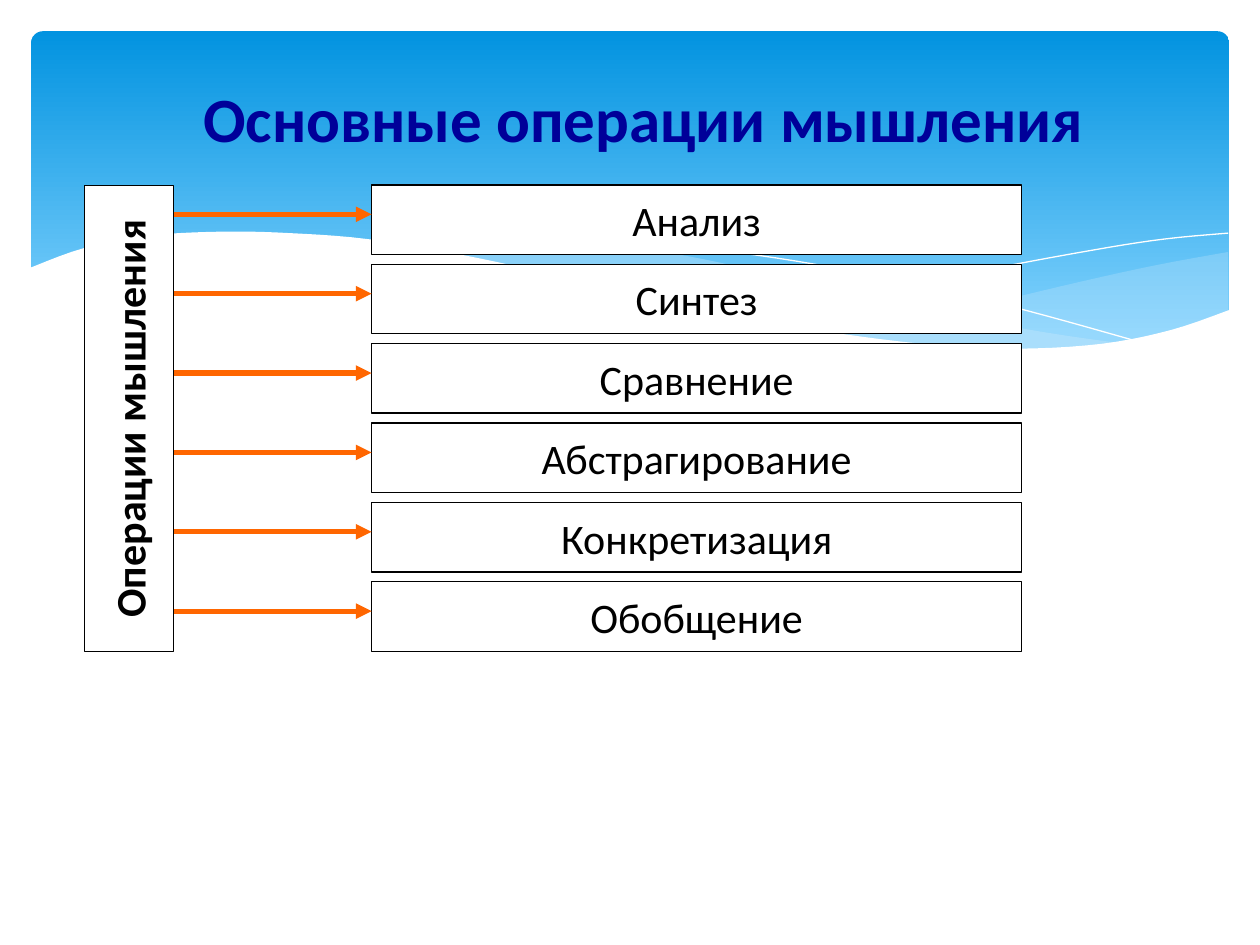
import pptx
import pptx.dml.color
import pptx.enum.shapes
import pptx.enum.text
import pptx.util
from dataclasses import dataclass
from lxml import etree
from pptx.oxml.ns import qn

Cm, Pt = pptx.util.Cm, pptx.util.Pt
Kind = pptx.enum.shapes.MSO_SHAPE
Align = pptx.enum.text.PP_ALIGN
Anchor = pptx.enum.text.MSO_ANCHOR


@dataclass(frozen=True)
class Theme:
    font: str = "Calibri"
    head: int = 36
    body: int = 24
    sky: str = "0293E0"
    pale: str = "83D3FE"
    veil: str = "C6E7FC"
    white: str = "FFFFFF"
    ink: str = "000000"
    navy: str = "000099"
    flame: str = "FF6600"


THEME = Theme()
STEPS = ["Анализ", "Синтез", "Сравнение", "Абстрагирование",
         "Конкретизация", "Обобщение"]

# Wave outlines in cm from the corner of the wave box
CREST = [(24.23, 1.57), (23.04, 1.98), (21.64, 2.26), (19.96, 2.36), (18.31, 2.29),
         (16.38, 2.06), (14.12, 1.68), (10.77, 0.91), (8.69, 0.46), (6.83, 0.15),
         (5.26, 0.03), (3.91, 0), (2.44, 0.08), (1.12, 0.33), (0, 0.74)]
RIGHT_TOP = [(24.18, 0.41), (22.81, 0.66), (21.29, 0.99), (18.54, 1.63), (16.21, 2.06)]
RIGHT_LOW = [(16.21, 2.06), (17.68, 2.24), (18.95, 2.36), (20.35, 2.36),
             (21.56, 2.29), (22.61, 2.11), (23.52, 1.85), (24.18, 1.6)]
MID_TOP = [(6.68, 0.18), (7.75, 0.08), (9.07, 0.03), (10.64, 0.13), (12.47, 0.36),
           (13.87, 0.61), (15.39, 0.97), (17.35, 1.42), (19.1, 1.78), (20.68, 2.06),
           (22.1, 2.26)]
MID_LOW = [(22.1, 2.26), (20.96, 2.36), (19.63, 2.39), (18.11, 2.31), (16.31, 2.08),
           (14.25, 1.73), (11.89, 1.22), (10.26, 0.81), (8.61, 0.48), (6.68, 0.18)]
FALL = [(7.26, 0.28), (8.38, 0.13), (9.98, 0.08), (11.84, 0.15), (14.2, 0.41),
        (16.31, 0.74), (18.72, 1.24), (20.52, 1.7), (22.45, 2.24)]
RISE = [(14.99, 1.85), (17.07, 1.3), (19.13, 0.81), (21.41, 0.38), (22.89, 0.15),
        (24.18, 0.03)]


def tint(color, code):
    color.rgb = pptx.dml.color.RGBColor.from_string(code)


def paint(shape, fill=None, line=None, width=0.75):
    shape.shadow.inherit = False
    if fill:
        shape.fill.solid()
        tint(shape.fill.fore_color, fill)
    else:
        shape.fill.background()
    if line:
        tint(shape.line.color, line)
        shape.line.width = Pt(width)
    else:
        shape.line.fill.background()


def write(frame, text, size, code, bold=False):
    para = frame.paragraphs[0]
    para.alignment = Align.CENTER
    run = para.add_run()
    run.text = text
    run.font.name, run.font.size, run.font.bold = THEME.font, Pt(size), bold
    tint(run.font.color, code)


def smooth(knots, steps=5):
    """Points of a Catmull-Rom curve through the knots."""
    ends = [knots[0], *knots, knots[-1]]
    points = [knots[0]]
    for a, b, c, d in zip(ends, ends[1:], ends[2:], ends[3:]):
        for i in range(1, steps + 1):
            t = i / steps
            points.append(tuple(
                (2 * q + (r - p) * t + (2 * p - 5 * q + 4 * r - s) * t ** 2
                 + (3 * q - p - 3 * r + s) * t ** 3) / 2
                for p, q, r, s in zip(a, b, c, d)))
    return points


def trace(slide, left, top, points, close=True):
    spots = [(Cm(left + x), Cm(top + y)) for x, y in points]
    pen = slide.shapes.build_freeform(*spots[0])
    pen.add_line_segments(spots[1:], close=close)
    return pen.convert_to_shape()


def add_sky(slide, left, top, width, height):
    panel = slide.shapes.add_shape(Kind.ROUNDED_RECTANGLE, Cm(left), Cm(top),
                                   Cm(width), Cm(height))
    paint(panel)
    panel.adjustments[0] = 0.034
    panel.fill.gradient()
    panel.fill.gradient_angle = 270
    for stop, place, code in zip(panel.fill.gradient_stops, (0, 0.9),
                                 (THEME.sky, THEME.pale)):
        stop.position = place
        tint(stop.color, code)


def add_waves(slide, left, top, width, height):
    # Translucent veils
    for upper, lower, alpha in ((RIGHT_TOP, RIGHT_LOW, 29), (MID_TOP, MID_LOW, 40)):
        veil = trace(slide, left, top, smooth(upper) + smooth(lower))
        paint(veil, THEME.veil)
        code = veil.fill._xPr.find(".//" + qn("a:srgbClr"))
        etree.SubElement(code, qn("a:alpha"), val=str(alpha * 1000))
    # Hairlines
    for knots in (FALL, RISE):
        paint(trace(slide, left, top, smooth(knots), False), line=THEME.white, width=0)
    # White foreground
    base = [(0, height), (width, height)]
    paint(trace(slide, left, top, smooth(CREST) + base), THEME.white)


def add_title(slide, left, top, width, height):
    title = slide.shapes.title
    title.left, title.top = Cm(left), Cm(top)
    title.width, title.height = Cm(width), Cm(height)
    title.text_frame.vertical_anchor = Anchor.TOP
    write(title.text_frame, "Основные операции мышления", THEME.head, THEME.navy, True)
    # Bring the title in front of the sky
    slide.shapes._spTree.append(title._element)


def add_box(slide, text, left, top, width, height, bold=False):
    box = slide.shapes.add_shape(Kind.RECTANGLE, Cm(left), Cm(top), Cm(width), Cm(height))
    paint(box, THEME.white, THEME.ink)
    box.text_frame.word_wrap = False
    box.text_frame.vertical_anchor = Anchor.MIDDLE
    write(box.text_frame, text, THEME.body, THEME.ink, bold)
    return box


def add_arrow(slide, start, end, level):
    arrow = slide.shapes.add_connector(pptx.enum.shapes.MSO_CONNECTOR.STRAIGHT,
                                       Cm(start), Cm(level), Cm(end), Cm(level))
    tint(arrow.line.color, THEME.flame)
    arrow.line.width = Pt(3)
    etree.SubElement(arrow.line._get_or_add_ln(), qn("a:tailEnd"), type="triangle")
    etree.SubElement(arrow._element.spPr, qn("a:effectLst"))


def add_scheme(slide, left, top, width, height):
    # Upright label: a long box turned about its centre
    thick, long = 1.8, 9.4
    label = add_box(slide, "Операции мышления", left + (thick - long) / 2,
                    top + (height + thick - long) / 2 + (long - thick) / 2 - thick / 2 + 0.01,
                    long, thick, True)
    label.rotation = 270
    # Steps, each with its arrow
    inset, tall = 5.79, 1.4
    pitch = (height - tall) / (len(STEPS) - 1)
    for i, text in enumerate(STEPS):
        level = top + i * pitch
        add_box(slide, text, left + inset, level, width - inset, tall)
        add_arrow(slide, left + thick, left + inset, level + 0.59)


def main():
    deck = pptx.Presentation()
    deck.slide_width, deck.slide_height = Cm(25.4), Cm(19.05)
    slide = deck.slides.add_slide(deck.slide_layouts[5])
    add_sky(slide, 0.63, 0.63, 24.15, 6.86)
    add_waves(slide, 0.58, 4.67, 24.23, 3.69)
    add_title(slide, 1.09, 1.47, 23.77, 1.8)
    add_scheme(slide, 1.7, 3.73, 18.9, 9.4)
    deck.save("out.pptx")


if __name__ == "__main__":
    main()
